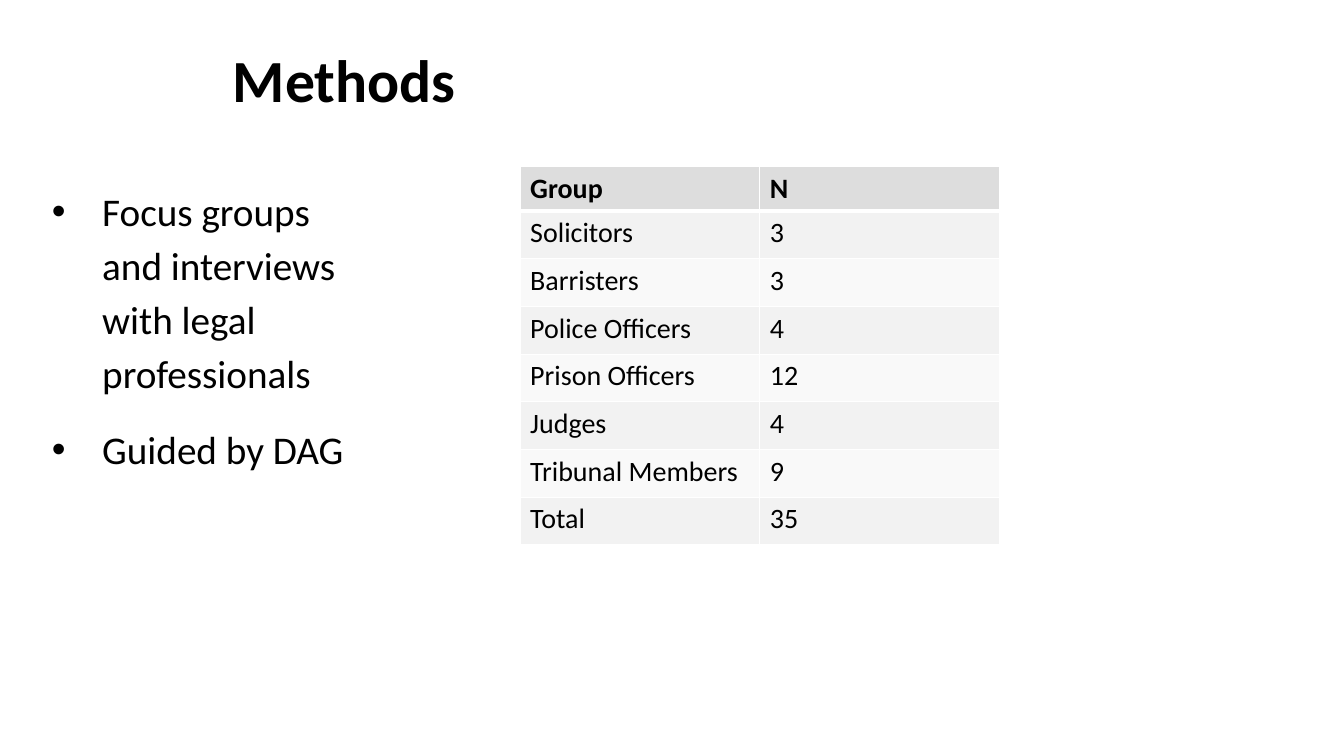
from lxml.etree import SubElement
from pptx import Presentation
from pptx.dml.color import RGBColor
from pptx.enum.text import MSO_ANCHOR as Anchor, PP_ALIGN as Align
from pptx.oxml.ns import qn
from pptx.util import Pt

# Content
TITLE = "Methods"
BULLETS = ["Focus groups and interviews with legal professionals", "Guided by DAG"]
GROUPS = [
    ("Group", "N"),
    ("Solicitors", "3"),
    ("Barristers", "3"),
    ("Police Officers", "4"),
    ("Prison Officers", "12"),
    ("Judges", "4"),
    ("Tribunal Members", "9"),
    ("Total", "35"),
]

# Style
FONT = "Calibri"
BLACK = RGBColor(0x00, 0x00, 0x00)
WHITE = RGBColor(0xFF, 0xFF, 0xFF)
HEADER = RGBColor(0xDD, 0xDD, 0xDD)
BANDS = [RGBColor(0xF9, 0xF9, 0xF9), RGBColor(0xF2, 0xF2, 0xF2)]
INSET = 9.6
INDENT = 36
CONTENT_TOP = 119
COLUMN_WIDTH = 171.2
HEADER_HEIGHT, ROW_HEIGHT = 28, 34.1


def set_font(para, size, bold=False):
    font = para.font
    font.name, font.size, font.bold = FONT, Pt(size), bold
    font.color.rgb = BLACK


def add_text(page, left, top, width, height, anchor):
    box = page.shapes.add_textbox(Pt(left), Pt(top), Pt(width), Pt(height))
    frame = box.text_frame
    frame.word_wrap = True
    frame.vertical_anchor = anchor
    frame.margin_left = frame.margin_right = Pt(INSET)
    frame.margin_top = frame.margin_bottom = Pt(INSET)
    return frame


def add_bullet(para):
    props = para._p.get_or_add_pPr()
    props.set("marL", str(Pt(INDENT)))
    props.set("indent", str(Pt(-INDENT)))
    SubElement(props, qn("a:buFont"), typeface="Arial")
    SubElement(props, qn("a:buChar"), char="•")


def border_cell(cell, widths):
    props = cell._tc.get_or_add_tcPr()
    for side, width in widths.items():
        line = SubElement(props, qn(f"a:{side}"), w=str(Pt(width)))
        fill = SubElement(line, qn("a:solidFill"))
        SubElement(fill, qn("a:srgbClr"), val=str(WHITE))


deck = Presentation()
deck.slide_width, deck.slide_height = Pt(960), Pt(540)
page = deck.slides.add_slide(deck.slide_layouts[6])

# Table of participants
height = HEADER_HEIGHT + ROW_HEIGHT * (len(GROUPS) - 1)
table = page.shapes.add_table(
    len(GROUPS), 2, Pt(371.5), Pt(CONTENT_TOP), Pt(2 * COLUMN_WIDTH), Pt(height)
).table
for column in table.columns:
    column.width = Pt(COLUMN_WIDTH)
for r, values in enumerate(GROUPS):
    is_header = r == 0
    table.rows[r].height = Pt(HEADER_HEIGHT if is_header else ROW_HEIGHT)
    for c, value in enumerate(values):
        cell = table.cell(r, c)
        cell.text = value
        set_font(cell.text_frame.paragraphs[0], 20, is_header)
        # Borders come before the fill in the cell's XML
        border_cell(cell, {"lnL": 1, "lnR": 1, "lnT": 3 if r == 1 else 1,
                           "lnB": 3 if is_header else 1})
        cell.fill.solid()
        cell.fill.fore_color.rgb = HEADER if is_header else BANDS[r % 2]

# Bullet list
frame = add_text(page, 27.4, CONTENT_TOP, 239, 415.4, Anchor.TOP)
for i, bullet in enumerate(BULLETS):
    para = frame.add_paragraph() if i else frame.paragraphs[0]
    para.text = bullet
    add_bullet(para)
    para.line_spacing = 1.15
    if i:
        para.space_before = Pt(16)
    set_font(para, 28)

# Title
para = add_text(page, 85.7, 0, 320.4, 112.3, Anchor.MIDDLE).paragraphs[0]
para.text = TITLE
para.alignment = Align.CENTER
set_font(para, 42.7, bold=True)

deck.save("out.pptx")
